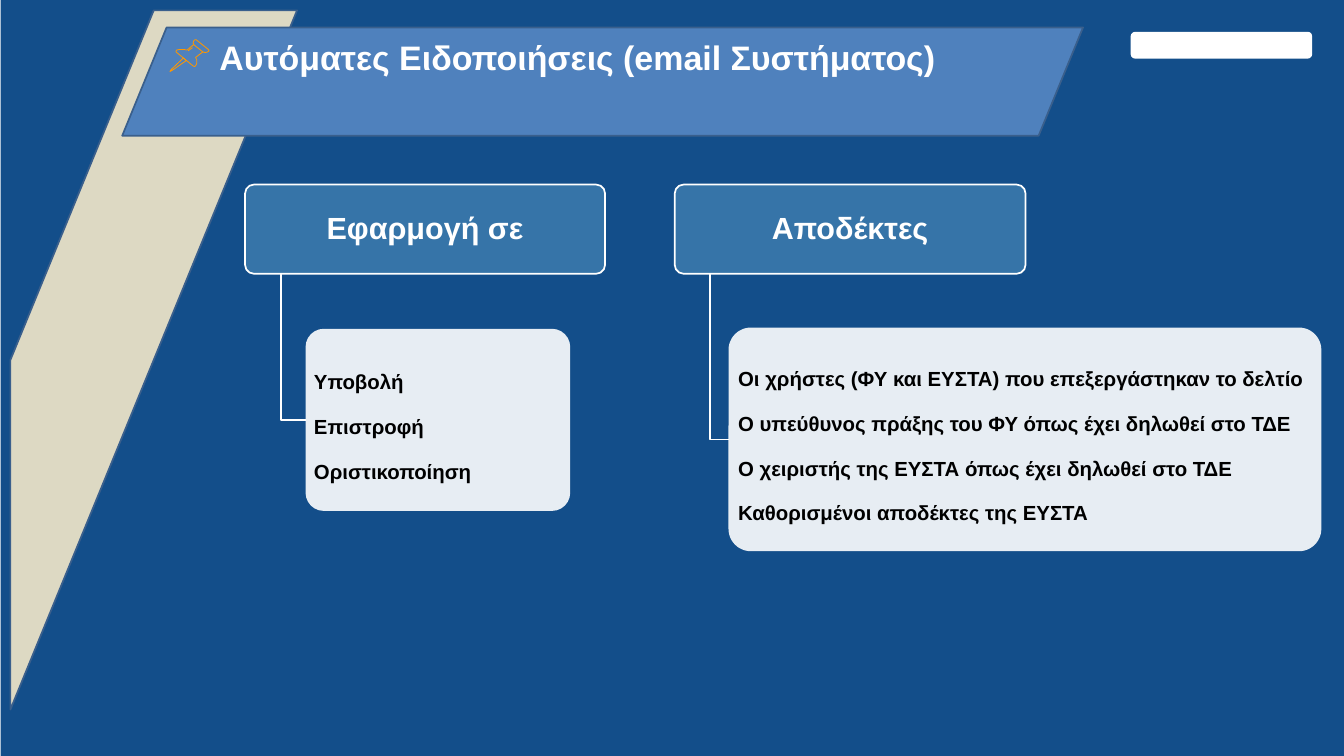
from dataclasses import dataclass

from lxml.etree import SubElement
from pptx import Presentation
from pptx.dml.color import RGBColor
from pptx.enum.shapes import MSO_SHAPE as Kind
from pptx.enum.text import MSO_ANCHOR as Anchor, PP_ALIGN as Align
from pptx.oxml.ns import qn
from pptx.util import Inches, Pt

FONT = "Arial"
NAVY, BLUE, STEEL, SAND = "134E8A", "4F81BD", "3674A8", "DDD9C3"
EDGE, WHITE, BLACK, AMBER = "3A5F8C", "FFFFFF", "000000", "FF9800"
WIDE, HIGH = 21.99, 12.37

Point = tuple[float, float]


@dataclass
class Box:
    x: float
    y: float
    w: float
    h: float


@dataclass
class Style:
    size: float
    color: str
    align: Align
    space: float
    after: float
    inset: Point


@dataclass
class Branch:
    title: str
    head: Box
    items: list[str]
    body: Box
    stem: float


@dataclass
class Stroke:
    points: list[Point]
    close: bool


HEAD = Style(36, WHITE, Align.CENTER, 0.9, 0, (0.07, 0.05))
BODY = Style(24, BLACK, Align.LEFT, 1.5, 9.7, (0.05, 0.03))
TITLE = Style(40, WHITE, Align.LEFT, 1, 0, (0.1, 0.05))

BRANCHES = [
    Branch("Εφαρμογή σε", Box(4.01, 3.02, 5.89, 1.46),
           ["Υποβολή", "Επιστροφή", "Οριστικοποίηση"],
           Box(5, 5.38, 4.33, 2.98), 4.6),
    Branch("Αποδέκτες", Box(11.04, 3.02, 5.74, 1.46),
           ["Οι χρήστες (ΦΥ και ΕΥΣΤΑ) που επεξεργάστηκαν το δελτίο",
            "Ο υπεύθυνος πράξης του ΦΥ όπως έχει δηλωθεί στο ΤΔΕ",
            "Ο χειριστής της ΕΥΣΤΑ όπως έχει δηλωθεί στο ΤΔΕ",
            "Καθορισμένοι αποδέκτες της ΕΥΣΤΑ"],
           Box(11.92, 5.36, 9.7, 3.66), 11.62),
]

# Needle, cap, collar and highlight of the pin
PIN = [
    Stroke([(3, 0.95), (2.8, 1.14), (2.78, 1.17), (2.82, 1.15), (3.05, 0.99)], True),
    Stroke([(3.17, 0.73), (3.32, 0.85), (3.36, 0.86), (3.4, 0.85), (3.42, 0.83),
            (3.41, 0.81), (3.21, 0.65), (3.19, 0.65), (3.17, 0.67), (3.16, 0.7)], True),
    Stroke([(3.17, 0.73), (3.06, 0.82), (3.01, 0.81), (2.94, 0.81), (2.89, 0.82),
            (2.88, 0.84), (2.88, 0.85), (3.16, 1.08), (3.18, 1.09), (3.2, 1.08),
            (3.22, 1.04), (3.22, 0.98), (3.2, 0.94), (3.32, 0.85)], False),
    Stroke([(3.08, 0.83), (3.15, 0.78)], False),
]


def rgb(code: str) -> RGBColor:
    return RGBColor.from_string(code)


def edge(shape, color: str, width: float) -> None:
    shape.line.color.rgb = rgb(color)
    shape.line.width = Pt(width)


def draw(slide, kind: Kind, box: Box, fill: str, line: str = "", adj: float | None = None):
    shape = slide.shapes.add_shape(
        kind, Inches(box.x), Inches(box.y), Inches(box.w), Inches(box.h))
    shape.shadow.inherit = False
    shape.fill.solid()
    shape.fill.fore_color.rgb = rgb(fill)
    if line:
        edge(shape, line, 2)
    else:
        shape.line.fill.background()
    if adj is not None:
        shape.adjustments[0] = adj
    return shape


def trace(slide, stroke: Stroke, color: str, width: float) -> None:
    start, *rest = [(Inches(x), Inches(y)) for x, y in stroke.points]
    pen = slide.shapes.build_freeform(*start)
    pen.add_line_segments(rest, close=stroke.close)
    shape = pen.convert_to_shape()
    shape.shadow.inherit = False
    shape.fill.background()
    edge(shape, color, width)


def write(shape, lines: list[str], style: Style, anchor: Anchor) -> None:
    frame = shape.text_frame
    frame.word_wrap = True
    frame.vertical_anchor = anchor
    frame.margin_left = frame.margin_right = Inches(style.inset[0])
    frame.margin_top = frame.margin_bottom = Inches(style.inset[1])
    for i, line in enumerate(lines):
        para = frame.add_paragraph() if i else frame.paragraphs[0]
        para.alignment = style.align
        para.line_spacing = style.space
        para.space_after = Pt(style.after)
        run = para.add_run()
        run.text = line
        run.font.name = FONT
        run.font.size = Pt(style.size)
        run.font.bold = True
        run.font.color.rgb = rgb(style.color)


def fade(shape, share: int) -> None:
    color = shape.fill._xPr.find(qn("a:solidFill"))[0]
    SubElement(color, qn("a:alpha"), val=str(share * 1000))


def grow(slide, branch: Branch) -> None:
    head, body = branch.head, branch.body
    top = draw(slide, Kind.ROUNDED_RECTANGLE, head, STEEL, WHITE, 0.1)
    write(top, [branch.title], HEAD, Anchor.MIDDLE)
    mid = body.y + body.h / 2
    stem = [(branch.stem, head.y + head.h), (branch.stem, mid), (body.x, mid)]
    trace(slide, Stroke(stem, False), WHITE, 2)
    card = draw(slide, Kind.ROUNDED_RECTANGLE, body, WHITE, adj=0.1)
    fade(card, 90)
    write(card, branch.items, BODY, Anchor.MIDDLE)


def main() -> None:
    deck = Presentation()
    deck.slide_width, deck.slide_height = Inches(WIDE), Inches(HIGH)
    slide = deck.slides.add_slide(deck.slide_layouts[6])

    # Backdrop and plain block in the corner
    draw(slide, Kind.RECTANGLE, Box(0.01, 0, WIDE - 0.01, HIGH), NAVY)
    draw(slide, Kind.ROUNDED_RECTANGLE, Box(18.5, 0.52, 2.97, 0.44), WHITE)

    # Title band
    draw(slide, Kind.DIAGONAL_STRIPE, Box(0.17, 0.17, 4.69, 11.44), SAND, EDGE)
    draw(slide, Kind.PARALLELOGRAM, Box(2, 0.45, 15.72, 1.77), BLUE, EDGE, 0.41)
    title = slide.shapes.add_textbox(Inches(3.49), Inches(0.55), Inches(13.65), Inches(0.77))
    write(title, ["Αυτόματες Ειδοποιήσεις (email Συστήματος)"], TITLE, Anchor.TOP)
    for stroke in PIN:
        trace(slide, stroke, AMBER, 0.96)

    # Branches
    for branch in BRANCHES:
        grow(slide, branch)

    deck.save("out.pptx")


if __name__ == "__main__":
    main()
